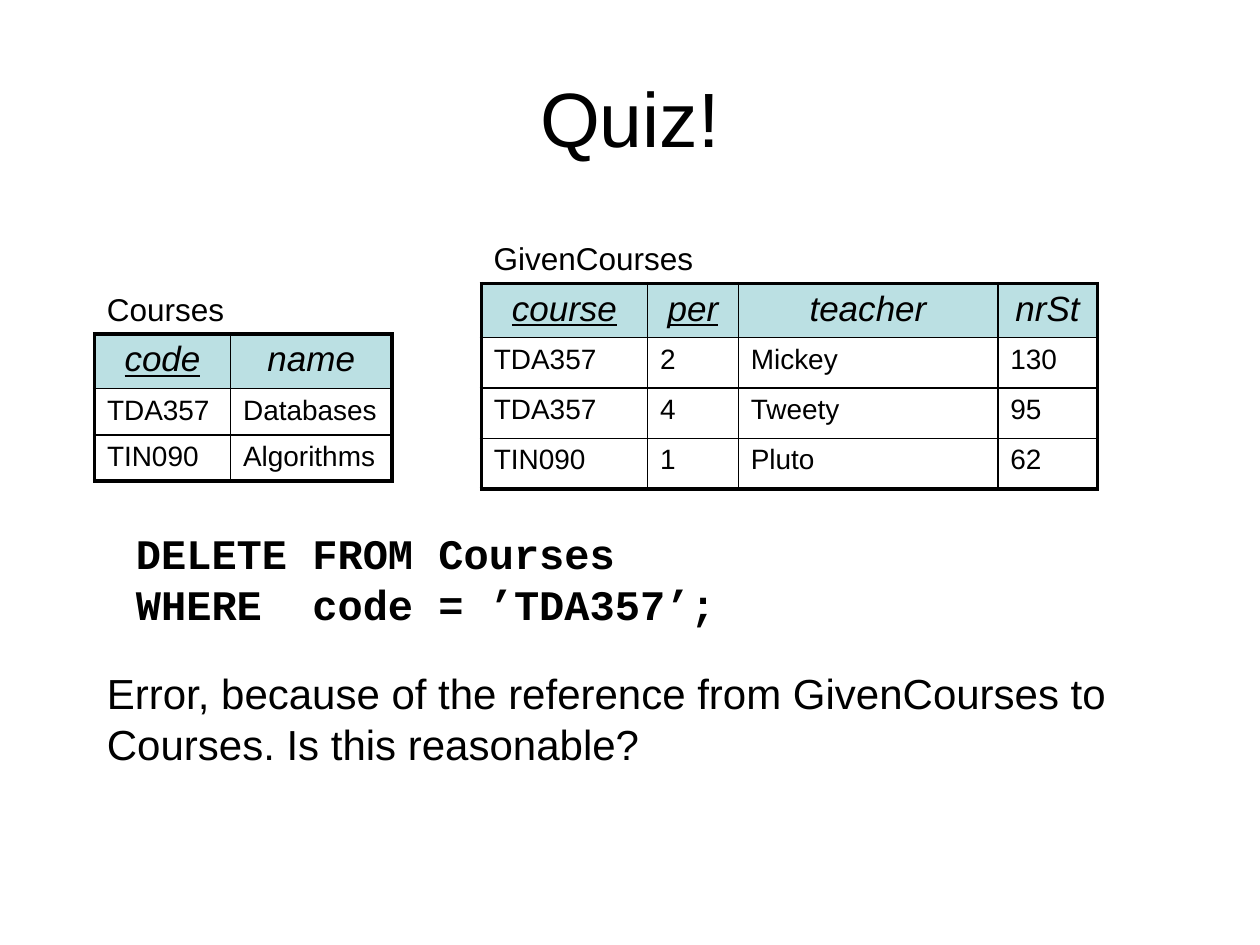
from lxml import etree
from pptx import Presentation
from pptx.dml.color import RGBColor
from pptx.enum.text import MSO_ANCHOR, MSO_AUTO_SIZE, PP_ALIGN
from pptx.oxml.ns import qn
from pptx.util import Inches, Pt

BLACK = RGBColor(0x00, 0x00, 0x00)
WHITE = RGBColor(0xFF, 0xFF, 0xFF)
HEADER_BLUE = RGBColor(0xBB, 0xE0, 0xE3)
CENTER, LEFT = PP_ALIGN.CENTER, PP_ALIGN.LEFT
MIDDLE = MSO_ANCHOR.MIDDLE
FIT_SHAPE = MSO_AUTO_SIZE.SHAPE_TO_FIT_TEXT
SANS, MONO = "Arial", "Courier New"
OUTER_LINE, INNER_LINE = Pt(2.25), Pt(1)
CAPTION_WIDTH, CAPTION_HEIGHT = 2.36, 0.4

TITLE = "Quiz!"
RELATIONS = [
    {
        "name": "GivenCourses",
        "at": (3.82, 2.25),
        "columns": [1.32, 0.72, 2.06, 0.79],
        "heights": (0.43, 0.4),
        "header": ["course", "per", "teacher", "nrSt"],
        "keys": {"course", "per"},
        "rows": [
            ["TDA357", "2", "Mickey", "130"],
            ["TDA357", "4", "Tweety", "95"],
            ["TIN090", "1", "Pluto", "62"],
        ],
    },
    {
        "name": "Courses",
        "at": (0.75, 2.65),
        "columns": [1.08, 1.28],
        "heights": (0.41, 0.36),
        "header": ["code", "name"],
        "keys": {"code"},
        "rows": [["TDA357", "Databases"], ["TIN090", "Algorithms"]],
    },
]
STATEMENT = ["DELETE FROM Courses", "WHERE  code = ’TDA357’;"]
ANSWER = ["Error, because of the reference from GivenCourses to Courses. Is this reasonable?"]


def add_run(paragraph, text, size, font=SANS, bold=False, italic=False, underline=False):
    run = paragraph.add_run()
    run.text = text
    run.font.name = font
    run.font.size = Pt(size)
    run.font.color.rgb = BLACK
    run.font.bold = bold
    run.font.italic = italic
    run.font.underline = underline


def add_text(slide, lines, left, top, width, height, size, font=SANS, bold=False):
    box = slide.shapes.add_textbox(*map(Inches, (left, top, width, height)))
    frame = box.text_frame
    frame.word_wrap = True
    frame.auto_size = FIT_SHAPE
    paragraph = frame.paragraphs[0]
    for index, line in enumerate(lines):
        if index:
            paragraph.add_line_break()
        add_run(paragraph, line, size, font, bold)


def add_borders(cell, outer_sides):
    properties = cell._tc.get_or_add_tcPr()
    for side in "LRTB":
        width = OUTER_LINE if side in outer_sides else INNER_LINE
        line = etree.SubElement(properties, qn(f"a:ln{side}"), w=str(int(width)))
        fill = etree.SubElement(line, qn("a:solidFill"))
        etree.SubElement(fill, qn("a:srgbClr"), val=str(BLACK))


def add_relation(slide, relation):
    left, top = relation["at"]
    columns = relation["columns"]
    records = [relation["header"]] + relation["rows"]
    header_height, row_height = relation["heights"]
    heights = [header_height] + [row_height] * len(relation["rows"])
    size = (left, top, sum(columns), sum(heights))
    table = slide.shapes.add_table(len(records), len(columns), *map(Inches, size)).table
    table.first_row = table.horz_banding = False
    for column, width in zip(table.columns, columns):
        column.width = Inches(width)
    for row, height in zip(table.rows, heights):
        row.height = Inches(height)

    last_row, last_column = len(records) - 1, len(columns) - 1
    for r, record in enumerate(records):
        for c, value in enumerate(record):
            cell = table.cell(r, c)
            edges = {"L": c == 0, "R": c == last_column, "T": r == 0, "B": r == last_row}
            add_borders(cell, {side for side, outer in edges.items() if outer})
            is_header = r == 0
            cell.fill.solid()
            cell.fill.fore_color.rgb = HEADER_BLUE if is_header else WHITE
            paragraph = cell.text_frame.paragraphs[0]
            paragraph.alignment = CENTER if is_header else LEFT
            add_run(paragraph, value, 20 if is_header else 16, italic=is_header,
                    underline=is_header and value in relation["keys"])

    add_text(slide, [relation["name"]], left, top - CAPTION_HEIGHT,
             CAPTION_WIDTH, CAPTION_HEIGHT, 18)


def main():
    deck = Presentation()
    deck.slide_width, deck.slide_height = Inches(10), Inches(7.5)
    slide = deck.slides.add_slide(deck.slide_layouts[5])

    title = slide.shapes.title
    title.left, title.top, title.width, title.height = map(Inches, (0.5, 0.3, 9, 1.25))
    title.text_frame.vertical_anchor = MIDDLE
    heading = title.text_frame.paragraphs[0]
    heading.alignment = CENTER
    add_run(heading, TITLE, 44)

    for relation in RELATIONS:
        add_relation(slide, relation)
    add_text(slide, STATEMENT, 0.98, 4.14, 6.85, 0.9, 24, MONO, bold=True)
    add_text(slide, ANSWER, 0.75, 5.25, 8.27, 0.9, 24)
    deck.save("out.pptx")


if __name__ == "__main__":
    main()
